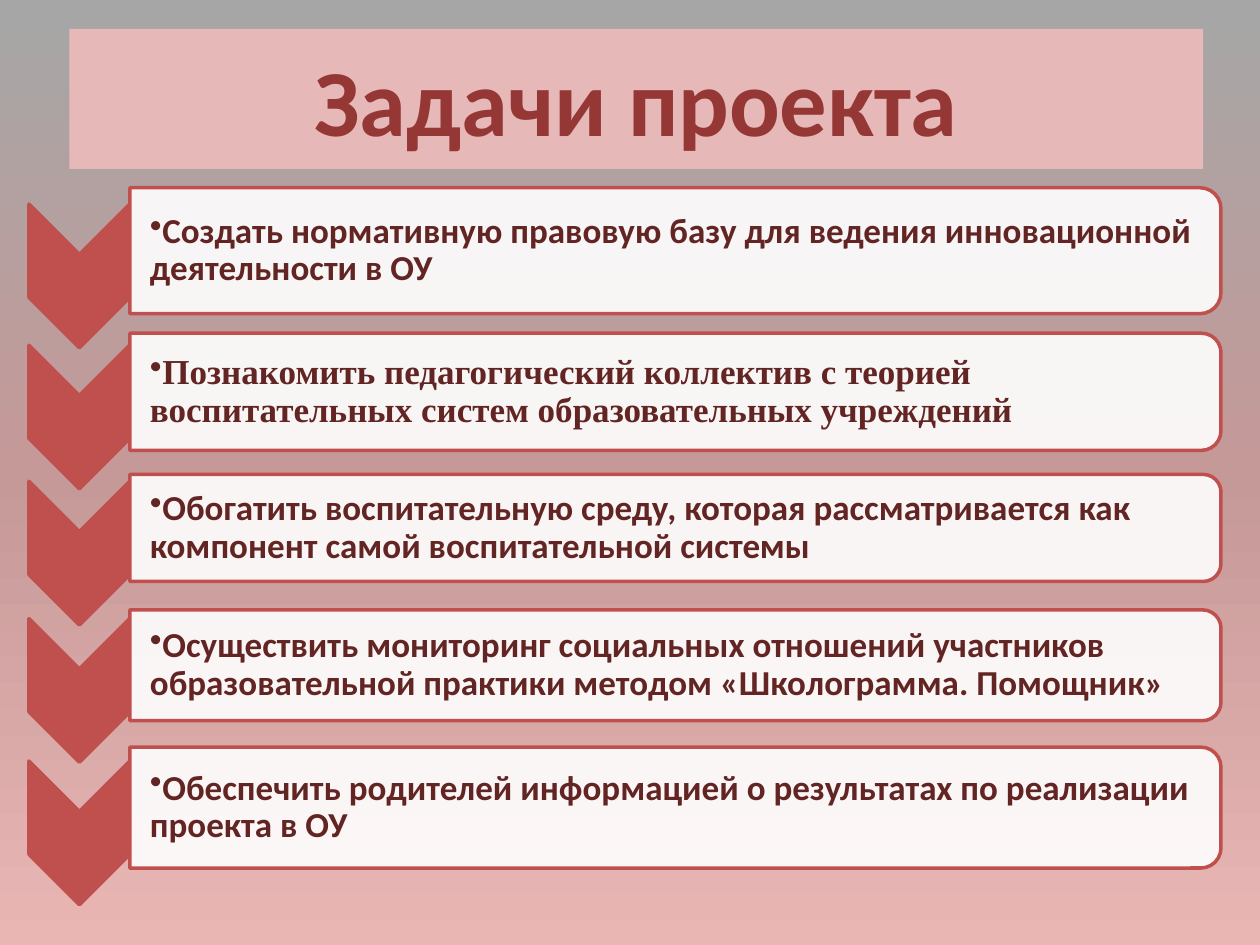
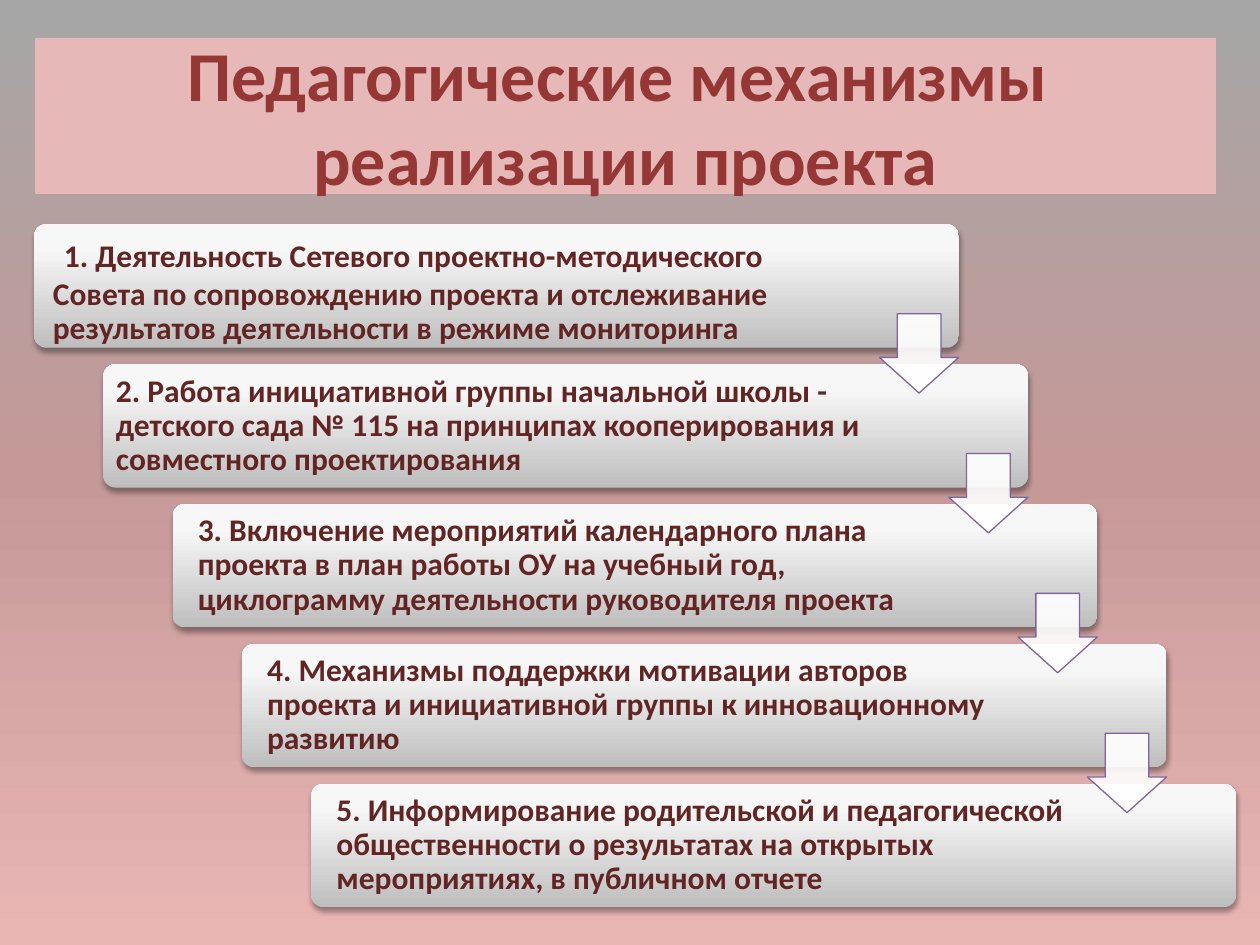
from copy import deepcopy

from lxml import etree
from pptx import Presentation
from pptx.dml.color import RGBColor
from pptx.enum.shapes import MSO_SHAPE
from pptx.enum.text import MSO_ANCHOR, PP_ALIGN
from pptx.oxml.ns import qn
from pptx.util import Inches, Pt

RECTANGLE = MSO_SHAPE.RECTANGLE
CHEVRON = MSO_SHAPE.CHEVRON
ROUND_TOP = MSO_SHAPE.ROUND_2_SAME_RECTANGLE
ROUNDED = MSO_SHAPE.ROUNDED_RECTANGLE
DOWN_ARROW = MSO_SHAPE.DOWN_ARROW
MIDDLE = MSO_ANCHOR.MIDDLE
CENTER = PP_ALIGN.CENTER

WHITE = RGBColor(0xFF, 0xFF, 0xFF)
PINK = RGBColor(0xE6, 0xB9, 0xB8)
RED = RGBColor(0xC0, 0x50, 0x4D)
TITLE_RED = RGBColor(0x95, 0x37, 0x35)
TEXT_RED = RGBColor(0x63, 0x25, 0x23)
PURPLE = RGBColor(0x80, 0x64, 0xA2)
BACKGROUND_STOPS = [(0, RGBColor(0xA6, 0xA6, 0xA6)), (0.5, RGBColor(0xC5, 0x99, 0x98)),
                    (1, RGBColor(0xE9, 0xB6, 0xB4))]
STEP_STOPS = [(0, RGBColor(0xBE, 0xBE, 0xBE)), (0.8, RGBColor(0xF7, 0xF7, 0xF7)),
              (1, RGBColor(0xF8, 0xF8, 0xF8))]
BODY_FONT = "Calibri"
SERIF_FONT = "Times New Roman"


def add_shape(slide, kind, box, fill, line=None, line_width=2, opaque=True):
    """Add a shadowless shape; a shape that is not opaque gets 90% alpha."""
    shape = slide.shapes.add_shape(kind, *map(Inches, box))
    shape.shadow.inherit = False
    shape.fill.solid()
    shape.fill.fore_color.rgb = fill
    if line is None:
        shape.line.fill.background()
    else:
        shape.line.color.rgb = line
        shape.line.width = Pt(line_width)
    if not opaque:
        color = shape.element.xpath("./p:spPr/a:solidFill/a:srgbClr")[0]
        etree.SubElement(color, qn("a:alpha"), val="90000")
    return shape


def paint_gradient(fill, owner, stops, angle):
    """Give the fill of the owner element three stops at a counterclockwise angle."""
    fill.gradient()
    fill.gradient_angle = angle
    stop_list = owner.xpath(".//a:gsLst")[0]
    stop_list.append(deepcopy(stop_list[0]))
    for stop, (position, color) in zip(fill.gradient_stops, stops):
        stop.position = position
        stop.color.rgb = color


presentation = Presentation()
presentation.slide_width = Inches(10)
presentation.slide_height = Inches(7.5)

# Background and title band of both slides
titles = [
    ("Задачи проекта", 54, (0.55, 0.23, 9, 1.11)),
    ("Педагогические механизмы \nреализации проекта", 40, (0.28, 0.3, 9.37, 1.24)),
]
slides = []
for title, size, box in titles:
    slide = presentation.slides.add_slide(presentation.slide_layouts[6])
    paint_gradient(slide.background.fill, slide.element, BACKGROUND_STOPS, 270)
    band = add_shape(slide, RECTANGLE, box, PINK)
    band.text_frame.word_wrap = True
    band.text_frame.vertical_anchor = MIDDLE
    paragraph = band.text_frame.paragraphs[0]
    paragraph.text = title
    paragraph.alignment = CENTER
    paragraph.font.name = BODY_FONT
    paragraph.font.size = Pt(size)
    paragraph.font.bold = True
    paragraph.font.color.rgb = TITLE_RED
    slides.append(slide)
tasks_slide, steps_slide = slides

# Text blocks: slide, box, insets, left margin, bullet, font, size, text
text_blocks = []

# Tasks: panel centre, panel height, font, text
tasks = [
    (1.99, 1, BODY_FONT,
     "Создать нормативную правовую базу для ведения инновационной деятельности в ОУ"),
    (3.11, 0.93, SERIF_FONT,
     "Познакомить педагогический коллектив с теорией воспитательных систем "
     "образовательных учреждений"),
    (4.19, 0.85, BODY_FONT,
     "Обогатить воспитательную среду, которая рассматривается как компонент самой "
     "воспитательной системы"),
    (5.28, 0.88, BODY_FONT,
     "Осуществить мониторинг социальных отношений участников образовательной практики "
     "методом «Школограмма. Помощник»"),
    (6.41, 0.96, BODY_FONT,
     "Обеспечить родителей информацией о результатах по реализации проекта в ОУ"),
]
PANEL_LEFT, PANEL_LENGTH = 1.03, 8.66
panel_middle = PANEL_LEFT + PANEL_LENGTH / 2
for center, height, font, text in tasks:
    chevron = add_shape(tasks_slide, CHEVRON, (0.06, center - 0.2, 1.14, 0.8), RED, RED)
    chevron.rotation = 90
    panel_box = (panel_middle - height / 2, center - PANEL_LENGTH / 2, height, PANEL_LENGTH)
    panel = add_shape(tasks_slide, ROUND_TOP, panel_box, WHITE, RED, opaque=False)
    panel.rotation = 90
    text_box = (PANEL_LEFT, center - height / 2 + 0.05, 8.61, height - 0.1)
    text_blocks.append((tasks_slide, text_box, (0.16, 0.01, 0.01, 0.01), 0, True, font, 20, text))

# Steps: text width, inset, left margin, text
steps = [
    (6.17, 0.12, 0,
     "1. Деятельность Сетевого проектно-методического Совета по сопровождению проекта "
     "и отслеживание результатов деятельности в режиме мониторинга"),
    (6.1, 0.07, 0,
     "2. Работа инициативной группы начальной школы - детского сада № 115 на принципах "
     "кооперирования и совместного проектирования"),
    (6.1, 0.07, 0.1,
     "3. Включение мероприятий календарного плана проекта в план работы ОУ на учебный год, "
     "циклограмму деятельности руководителя проекта"),
    (6.1, 0.07, 0.1,
     "4. Механизмы поддержки мотивации авторов проекта и инициативной группы "
     "к инновационному развитию"),
    (6.1, 0.07, 0.1,
     "5. Информирование родительской и педагогической общественности о результатах "
     "на открытых мероприятиях, в публичном отчете"),
]
corners = [(0.27 + 0.55 * row, 1.78 + 1.11 * row) for row in range(len(steps))]
for (left, top), (width, inset, margin, text) in zip(corners, steps):
    step = add_shape(steps_slide, ROUNDED, (left, top, 7.34, 0.98), WHITE)
    step.adjustments[0] = 0.1
    paint_gradient(step.fill, step.element, STEP_STOPS, 90)
    effects = step.element.xpath("./p:spPr/a:effectLst")[0]
    shadow = etree.SubElement(effects, qn("a:outerShdw"), blurRad=str(Pt(3.1)),
                              dist=str(Pt(1.8)), dir="5400000", rotWithShape="0")
    shadow_color = etree.SubElement(shadow, qn("a:srgbClr"), val="000000")
    etree.SubElement(shadow_color, qn("a:alpha"), val="35000")
    text_box = (left + 0.03, top + 0.03, width, 0.92)
    text_blocks.append((steps_slide, text_box, (inset,) * 4, margin, False, BODY_FONT, 18, text))

for left, top in corners[:-1]:
    arrow = add_shape(steps_slide, DOWN_ARROW, (left + 6.71, top + 0.71, 0.63, 0.63),
                      WHITE, PURPLE, 0.75, opaque=False)
    arrow.adjustments[0] = 0.55
    arrow.adjustments[1] = 0.45

for slide, box, insets, margin, bulleted, font, size, text in text_blocks:
    frame = slide.shapes.add_textbox(*map(Inches, box)).text_frame
    frame.word_wrap = True
    frame.vertical_anchor = MIDDLE
    (frame.margin_left, frame.margin_top,
     frame.margin_right, frame.margin_bottom) = map(Inches, insets)
    paragraph = frame.paragraphs[0]
    paragraph.line_spacing = 0.9
    paragraph.font.name = font
    paragraph.font.size = Pt(size)
    paragraph.font.bold = True
    paragraph.font.color.rgb = TEXT_RED
    properties = paragraph._p.get_or_add_pPr()
    properties.set("marL", str(Inches(margin)))
    properties.set("indent", "0")
    if bulleted:
        bullet = etree.Element(qn("a:buChar"), char="•")
        properties.find(qn("a:defRPr")).addprevious(bullet)
    if text.startswith("1."):
        # A taller leading space sets the height of the first line
        lead = paragraph.add_run()
        lead.text = " "
        lead.font.size = Pt(28)
    paragraph.add_run().text = text

presentation.save("out.pptx")
